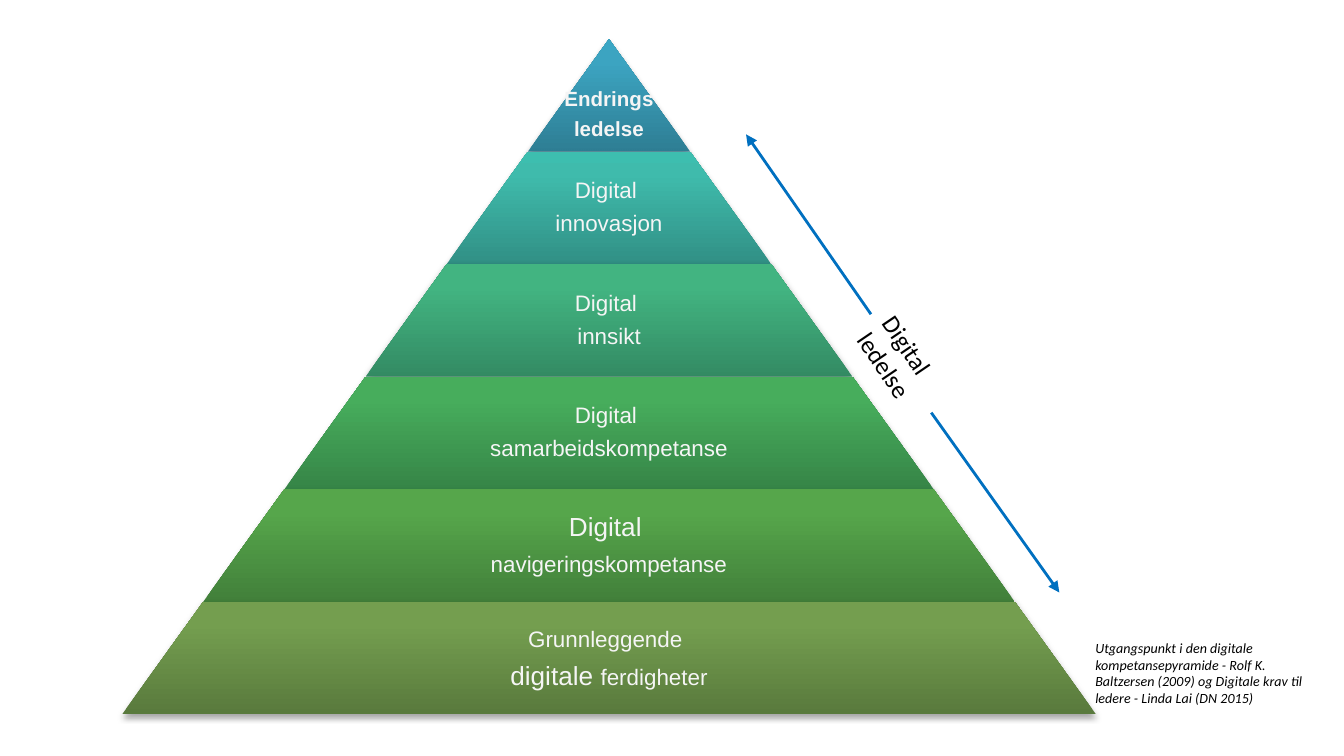
from lxml import etree
from pptx import Presentation
from pptx.dml.color import RGBColor
from pptx.enum.shapes import MSO_CONNECTOR, MSO_SHAPE
from pptx.enum.text import MSO_ANCHOR, MSO_AUTO_SIZE, PP_ALIGN
from pptx.oxml import parse_xml
from pptx.oxml.ns import nsdecls, qn
from pptx.util import Cm, Pt

BLACK = RGBColor(0x00, 0x00, 0x00)
OFF_WHITE = RGBColor(0xF5, 0xF5, 0xF5)
ARROW_BLUE = RGBColor(0x00, 0x70, 0xC0)
BLUE = [RGBColor(0x2E, 0x7E, 0x94), RGBColor(0x3C, 0xA4, 0xC1), RGBColor(0x3A, 0xA6, 0xC4)]
TEAL = [RGBColor(0x31, 0x90, 0x85), RGBColor(0x3F, 0xBB, 0xAC), RGBColor(0x3D, 0xBE, 0xAF)]
MINT = [RGBColor(0x33, 0x8B, 0x63), RGBColor(0x42, 0xB4, 0x81), RGBColor(0x40, 0xB7, 0x82)]
GREEN = [RGBColor(0x36, 0x85, 0x47), RGBColor(0x47, 0xAD, 0x5C), RGBColor(0x45, 0xB0, 0x5C)]
LEAF = [RGBColor(0x42, 0x80, 0x3A), RGBColor(0x56, 0xA6, 0x4B), RGBColor(0x55, 0xA8, 0x4A)]
OLIVE = [RGBColor(0x59, 0x7A, 0x3D), RGBColor(0x74, 0x9E, 0x4F), RGBColor(0x74, 0xA1, 0x4E)]

# Each level: gradient colours, then lines made of (text, size) runs
LEVELS = [
    (BLUE, [[("Endrings", 11)], [("ledelse", 11)]]),
    (TEAL, [[("Digital ", 12)], [("innovasjon", 12)]]),
    (MINT, [[("Digital ", 12)], [("innsikt", 12)]]),
    (GREEN, [[("Digital ", 12)], [("samarbeidskompetanse", 12)]]),
    (LEAF, [[("Digital ", 14)], [("navigeringskompetanse", 12)]]),
    (OLIVE, [[("Grunnleggende", 12), (" ", 14)], [("digitale ", 14), ("ferdigheter", 12)]]),
]
CENTRE, TOP, BAND_HEIGHT, SLOPE = 11.51, 0.74, 2.127, 0.721


def add_span(para, text, size, font, color):
    span = para.add_run()
    span.text = text
    span.font.size = Pt(size)
    span.font.name = font
    span.font.color.rgb = color
    return span


def style_band(band, colors):
    """Vertical gradient, no outline and a soft shadow below."""
    band.line.fill.background()
    stops = "".join(
        f'<a:gs pos="{pos}"><a:srgbClr val="{color}"/></a:gs>'
        for pos, color in zip((0, 80000, 100000), colors))
    outline = band.element.spPr.find(qn("a:ln"))
    outline.addprevious(parse_xml(
        f'<a:gradFill {nsdecls("a")} rotWithShape="1"><a:gsLst>{stops}</a:gsLst>'
        '<a:lin ang="16200000" scaled="0"/></a:gradFill>'))
    outline.addnext(parse_xml(
        f'<a:effectLst {nsdecls("a")}><a:outerShdw blurRad="40000" dist="23000" '
        'dir="5400000" rotWithShape="0"><a:srgbClr val="000000">'
        '<a:alpha val="35000"/></a:srgbClr></a:outerShdw></a:effectLst>'))


deck = Presentation()
deck.slide_width, deck.slide_height = Cm(25.4), Cm(14.29)
page = deck.slides.add_slide(deck.slide_layouts[6])

# Pyramid, from the tip down
pyramid = page.shapes.add_group_shape()
for level, (colors, lines) in enumerate(LEVELS):
    width = 2 * SLOPE * BAND_HEIGHT * (level + 1)
    top = TOP + level * BAND_HEIGHT
    band = pyramid.shapes.add_shape(
        MSO_SHAPE.TRAPEZOID, Cm(CENTRE - width / 2), Cm(top), Cm(width), Cm(BAND_HEIGHT))
    band.adjustments[0] = SLOPE
    style_band(band, colors)

    is_tip = level == 0
    text_width = width if is_tip else 0.65 * width
    box = pyramid.shapes.add_textbox(
        Cm(CENTRE - text_width / 2), Cm(top), Cm(text_width), Cm(BAND_HEIGHT))
    frame = box.text_frame
    frame.word_wrap = True
    frame.vertical_anchor = MSO_ANCHOR.MIDDLE
    frame.margin_left = frame.margin_right = frame.margin_bottom = Cm(0.05)
    frame.margin_top = Cm(0.79 if is_tip else 0.05)
    for row, spans in enumerate(lines):
        para = frame.add_paragraph() if row else frame.paragraphs[0]
        para.alignment = PP_ALIGN.CENTER
        para.line_spacing = 0.9
        para.space_after = Pt(0.4 * max(size for _, size in spans))
        for text, size in spans:
            add_span(para, text, size, "Arial", OFF_WHITE).font.bold = is_tip

# Source note
box = page.shapes.add_textbox(Cm(20.45), Cm(11.96), Cm(4.5), Cm(1.55))
box.text_frame.word_wrap = True
box.text_frame.auto_size = MSO_AUTO_SIZE.SHAPE_TO_FIT_TEXT
note = ("Utgangspunkt i den digitale kompetansepyramide - Rolf K. Baltzersen (2009) "
        "og Digitale krav til ledere - Linda Lai (DN 2015)")
add_span(box.text_frame.paragraphs[0], note, 7.5, "Calibri", BLACK).font.italic = True

# Arrows along the slope, pointing away from the label
for x1, y1, x2, y2 in [(16.46, 5.94, 14.1, 2.54), (17.6, 7.8, 20.02, 11.2)]:
    arrow = page.shapes.add_connector(
        MSO_CONNECTOR.STRAIGHT, Cm(x1), Cm(y1), Cm(x2), Cm(y2))
    arrow.line.color.rgb = ARROW_BLUE
    arrow.line.width = Pt(1.5)
    etree.SubElement(arrow.line._get_or_add_ln(), qn("a:tailEnd"), type="triangle")
    etree.SubElement(arrow._element.spPr, qn("a:effectLst"))

# Label between the arrows
box = page.shapes.add_textbox(Cm(15.95), Cm(6.15), Cm(2.13), Cm(1.42))
box.rotation = 55.8
box.text_frame.word_wrap = True
box.text_frame.auto_size = MSO_AUTO_SIZE.SHAPE_TO_FIT_TEXT
add_span(box.text_frame.paragraphs[0], "Digital ledelse", 13.5, "Calibri", BLACK)

deck.save("out.pptx")
